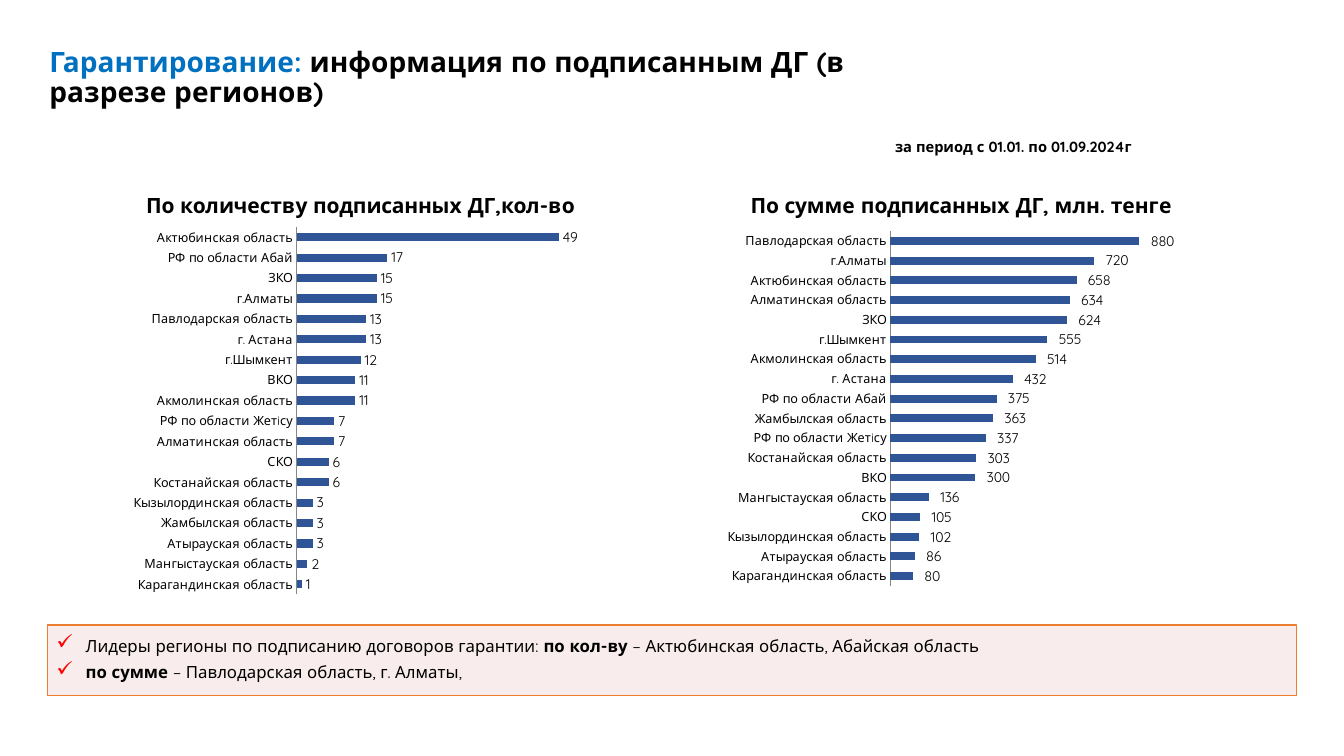
from lxml import etree
from pptx import Presentation
from pptx.chart.data import CategoryChartData
from pptx.dml.color import RGBColor
from pptx.enum.chart import XL_CHART_TYPE, XL_LABEL_POSITION, XL_TICK_MARK
from pptx.enum.shapes import MSO_SHAPE
from pptx.enum.text import MSO_ANCHOR, MSO_AUTO_SIZE, PP_ALIGN
from pptx.oxml import parse_xml
from pptx.oxml.ns import nsdecls, qn
from pptx.util import Inches, Pt

BAR = XL_CHART_TYPE.BAR_CLUSTERED
OUTSIDE = XL_LABEL_POSITION.OUTSIDE_END
NO_TICK = XL_TICK_MARK.NONE
RECT = MSO_SHAPE.RECTANGLE
TOP, MIDDLE = MSO_ANCHOR.TOP, MSO_ANCHOR.MIDDLE
LEFT = PP_ALIGN.LEFT
NO_FIT = MSO_AUTO_SIZE.NONE

FONT = "Quicksand"
COLORS = {"text": "000000", "accent": "0070C0", "bar": "2F5597", "axis": "868686",
          "note": "F2DCDB", "border": "ED7D31", "check": "FF0000"}

BY_COUNT = [("Актюбинская область", 49), ("РФ по области Абай", 17), ("ЗКО", 15),
            ("г.Алматы", 15), ("Павлодарская область", 13), ("г. Астана", 13),
            ("г.Шымкент", 12), ("ВКО", 11), ("Акмолинская область", 11),
            ("РФ по области Жетiсу", 7), ("Алматинская область", 7), ("СКО", 6),
            ("Костанайская область", 6), ("Кызылординская область", 3),
            ("Жамбылская область", 3), ("Атырауская область", 3),
            ("Мангыстауская область", 2), ("Карагандинская область", 1)]
BY_SUM = [("Павлодарская область", 880), ("г.Алматы", 720), ("Актюбинская область", 658),
          ("Алматинская область", 634), ("ЗКО", 624), ("г.Шымкент", 555),
          ("Акмолинская область", 514), ("г. Астана", 432), ("РФ по области Абай", 375),
          ("Жамбылская область", 363), ("РФ по области Жетiсу", 337),
          ("Костанайская область", 303), ("ВКО", 300), ("Мангыстауская область", 136),
          ("СКО", 105), ("Кызылординская область", 102), ("Атырауская область", 86),
          ("Карагандинская область", 80)]
LEADERS = [[("Лидеры регионы по подписанию договоров гарантии: ", False), ("по кол-ву", True),
            (" – Актюбинская область, Абайская область", False)],
           [("по сумме ", True), ("– Павлодарская область, г. Алматы,", False)]]


def rgb(name):
    return RGBColor.from_string(COLORS[name])


def format_font(font, size, color="text", bold=False):
    for key, value in {"name": FONT, "size": Pt(size), "bold": bold}.items():
        setattr(font, key, value)
    font.color.rgb = rgb(color)


def add_run(p, text, size, color="text", bold=False):
    r = p.add_run()
    r.text = text
    format_font(r.font, size, color, bold)


def place(sp, box):
    for key, value in zip(("left", "top", "width", "height"), box):
        setattr(sp, key, Inches(value))


def add_title(s, box):
    sp = s.shapes.title
    place(sp, box)
    tf = sp.text_frame
    for key, value in {"word_wrap": True, "auto_size": NO_FIT, "vertical_anchor": TOP}.items():
        setattr(tf, key, value)
    p = tf.paragraphs[0]
    p.alignment, p.line_spacing = LEFT, 0.9
    add_run(p, "Гарантирование: ", 20, "accent", True)
    add_run(p, "информация по подписанным ДГ (в разрезе регионов)", 20, bold=True)


def add_period(s, box):
    sp = s.shapes.add_textbox(*map(Inches, box))
    sp.text_frame.word_wrap = False
    add_run(sp.text_frame.paragraphs[0], "за период с 01.01. по 01.09.2024г", 10.5, bold=True)


def set_plot_area(chart, area):
    """Fix the inner plot area as fractions of the chart."""
    plot_area = chart._chartSpace.chart.plotArea
    for old in plot_area.findall(qn("c:layout")):
        plot_area.remove(old)
    layout = parse_xml(f"<c:layout {nsdecls('c')}><c:manualLayout/></c:layout>")
    settings = [("layoutTarget", "inner"), ("xMode", "edge"), ("yMode", "edge")]
    settings += zip("xywh", area)
    for tag, value in settings:
        etree.SubElement(layout[0], qn(f"c:{tag}")).set("val", str(value))
    plot_area.insert(0, layout)


def add_region_chart(s, box, title, rows, maximum, area, number_format):
    data = CategoryChartData()
    rows = rows[::-1]
    data.categories = [region for region, _ in rows]
    data.add_series("Series 1", [value for _, value in rows])
    chart = s.shapes.add_chart(BAR, *map(Inches, box), data).chart
    format_font(chart.font, 10)
    chart.has_legend = False
    chart.has_title = True
    add_run(chart.chart_title.text_frame.paragraphs[0], title, 15, bold=True)
    chart.chart_title.include_in_layout = False
    set_plot_area(chart, area)

    # Axes
    axis = chart.category_axis
    axis.major_tick_mark = axis.minor_tick_mark = NO_TICK
    axis.format.line.color.rgb = rgb("axis")
    format_font(axis.tick_labels.font, 9)
    scale = chart.value_axis
    scale.minimum_scale, scale.maximum_scale = 0, maximum
    scale.has_major_gridlines = scale.visible = False

    # Bars and their values
    plot = chart.plots[0]
    plot.gap_width, plot.vary_by_categories = 150, False
    fill = plot.series[0].format.fill
    fill.solid()
    fill.fore_color.rgb = rgb("bar")
    plot.has_data_labels = True
    labels = plot.data_labels
    for key, value in {"show_value": True, "position": OUTSIDE, "number_format": number_format,
                       "number_format_is_linked": False}.items():
        setattr(labels, key, value)
    format_font(labels.font, 10)


def add_check(p):
    pPr = p._p.get_or_add_pPr()
    pPr.set("marL", str(Inches(0.3)))
    pPr.set("indent", str(Inches(-0.29)))
    for xml in (f'<a:buClr {nsdecls("a")}><a:srgbClr val="{COLORS["check"]}"/></a:buClr>',
                f'<a:buSzPct {nsdecls("a")} val="125000"/>',
                f'<a:buChar {nsdecls("a")} char="✓"/>'):
        pPr.append(parse_xml(xml))


def add_leaders(s, box):
    sp = s.shapes.add_shape(RECT, *map(Inches, box))
    sp.shadow.inherit = False
    sp.fill.solid()
    sp.fill.fore_color.rgb = rgb("note")
    tint = sp._element.spPr.find(qn("a:solidFill"))[0]
    etree.SubElement(tint, qn("a:alpha")).set("val", "50000")
    sp.line.color.rgb = rgb("border")
    sp.line.width = Pt(1)
    tf = sp.text_frame
    for key, value in {"margin_left": Inches(0.08), "margin_right": Inches(0.08),
                       "margin_top": Inches(0.04), "margin_bottom": Inches(0.04),
                       "word_wrap": True, "vertical_anchor": MIDDLE}.items():
        setattr(tf, key, value)
    for i, parts in enumerate(LEADERS):
        p = tf.add_paragraph() if i else tf.paragraphs[0]
        for key, value in {"alignment": LEFT, "line_spacing": 0.9, "space_after": Pt(6)}.items():
            setattr(p, key, value)
        add_check(p)
        for text, bold in parts:
            add_run(p, text, 12, bold=bold)


def main():
    prs = Presentation()
    prs.slide_width, prs.slide_height = Inches(13.33), Inches(7.5)
    s = prs.slides.add_slide(prs.slide_layouts[5])
    add_title(s, (0.39, 0.43, 9.14, 0.77))
    add_period(s, (8.78, 1.32, 2.63, 0.28))
    add_leaders(s, (0.47, 6.2, 12.39, 0.7))
    add_region_chart(s, (0.67, 1.71, 5.81, 4.35), "По количеству подписанных ДГ,кол-во",
                     BY_COUNT, 60, (0.391, 0.125, 0.548, 0.838), "General")
    add_region_chart(s, (6.53, 1.71, 6.01, 4.25), "По сумме подписанных ДГ, млн. тенге",
                     BY_SUM, 1000, (0.383, 0.137, 0.467, 0.829), r"_-* #\ ##0_р_._-")
    prs.save("out.pptx")


if __name__ == "__main__":
    main()
